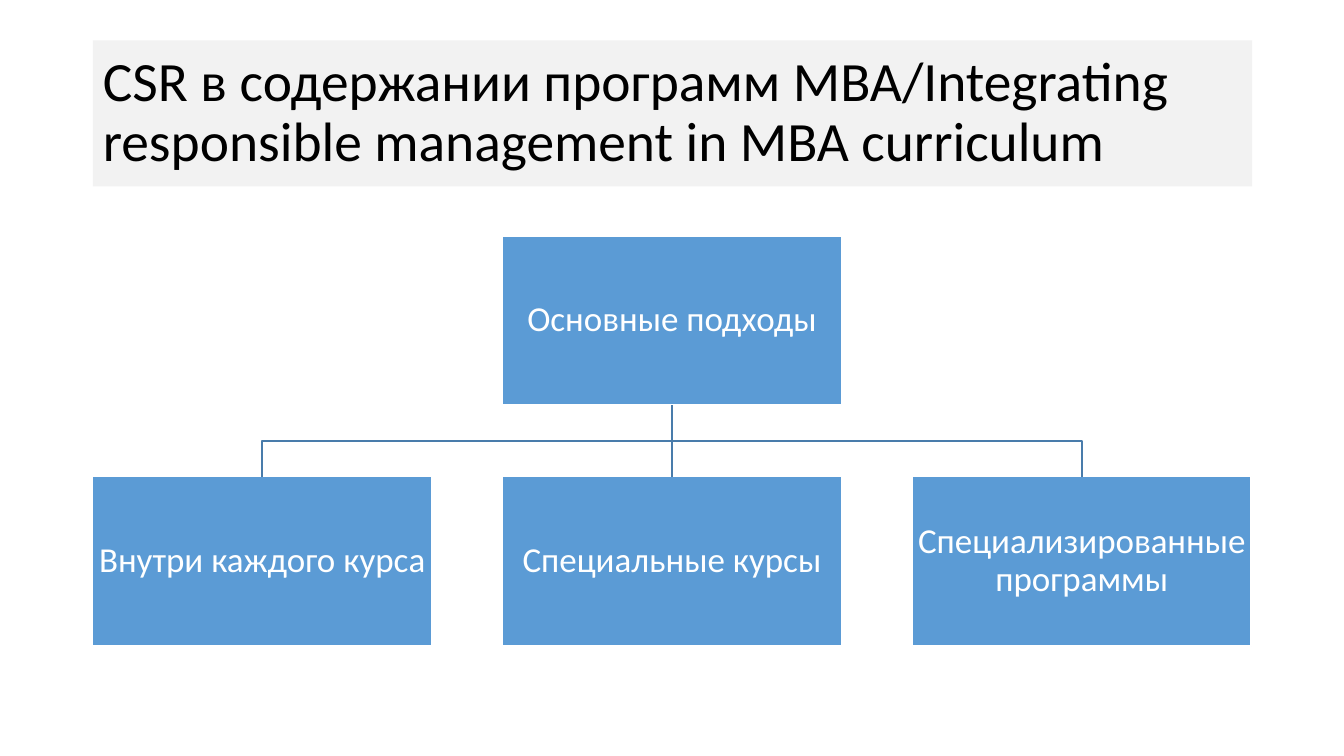
from lxml import etree
from pptx import Presentation
from pptx import util as u
from pptx.dml import color
from pptx.enum import shapes, text
from pptx.oxml import ns

FONT = "Calibri"
LEFT, TOP = 0.92, 2.34
BOX_WIDTH, BOX_HEIGHT = 3.36, 1.68
COLUMN_STEP, ROW_STEP = 4.065, 2.39
TITLE = "CSR в содержании программ МВА/Integrating responsible management in MBA curriculum"
ROOT = "Основные подходы"
APPROACHES = ["Внутри каждого курса", "Специальные курсы", "Специализированные программы"]


def paint(target, hex_color):
    target.solid()
    target.fore_color.rgb = color.RGBColor.from_string(hex_color)


def outline(line, hex_color):
    paint(line.fill, hex_color)
    line.width = u.Pt(1)


def write(frame, wording, size, hex_color, align):
    frame.word_wrap = True
    frame.auto_size = text.MSO_AUTO_SIZE.NONE
    frame.vertical_anchor = text.MSO_ANCHOR.MIDDLE
    frame.text = wording
    paragraph = frame.paragraphs[0]
    paragraph.alignment = align
    paragraph.line_spacing = 0.9
    paragraph.font.name = FONT
    paragraph.font.size = u.Pt(size)
    paint(paragraph.font.fill, hex_color)


def add_title(slide):
    title = slide.shapes.title
    title.left, title.top, title.width, title.height = map(u.Inches, (LEFT, 0.4, 11.5, 1.45))
    paint(title.fill, "F2F2F2")
    write(title.text_frame, TITLE, 39.6, "000000", text.PP_ALIGN.LEFT)


def add_box(slide, column, row, wording):
    box = slide.shapes.add_shape(
        shapes.MSO_SHAPE.RECTANGLE,
        u.Inches(LEFT + column * COLUMN_STEP), u.Inches(TOP + row * ROW_STEP),
        u.Inches(BOX_WIDTH), u.Inches(BOX_HEIGHT))
    box.shadow.inherit = False
    paint(box.fill, "5B9BD5")
    outline(box.line, "FFFFFF")
    frame = box.text_frame
    frame.margin_left = frame.margin_right = u.Inches(0.02)
    frame.margin_top = frame.margin_bottom = u.Inches(0.02)
    write(frame, wording, 25, "FFFFFF", text.PP_ALIGN.CENTER)
    return box


def add_straight_branch(slide, parent, child):
    branch = slide.shapes.add_connector(shapes.MSO_CONNECTOR.STRAIGHT, 0, 0, 0, 0)
    branch.begin_connect(parent, 2)
    branch.end_connect(child, 0)
    outline(branch.line, "497CAB")
    etree.SubElement(branch.element.spPr, ns.qn("a:effectLst"))


def add_bent_branch(slide, parent, child):
    start_x = parent.left + parent.width // 2
    start_y = parent.top + parent.height
    end_x = child.left + child.width // 2
    middle_y = (start_y + child.top) // 2
    builder = slide.shapes.build_freeform(start_x, start_y)
    builder.add_line_segments(
        [(start_x, middle_y), (end_x, middle_y), (end_x, child.top)], close=False)
    branch = builder.convert_to_shape()
    branch.shadow.inherit = False
    branch.fill.background()
    outline(branch.line, "497CAB")


def main():
    deck = Presentation()
    deck.slide_width, deck.slide_height = u.Inches(13.33), u.Inches(7.5)
    slide = deck.slides.add_slide(deck.slide_layouts[5])
    add_title(slide)
    root = add_box(slide, 1, 0, ROOT)
    for column, approach in enumerate(APPROACHES):
        child = add_box(slide, column, 1, approach)
        add_branch = add_straight_branch if column == 1 else add_bent_branch
        add_branch(slide, root, child)
    deck.save("out.pptx")


if __name__ == "__main__":
    main()
